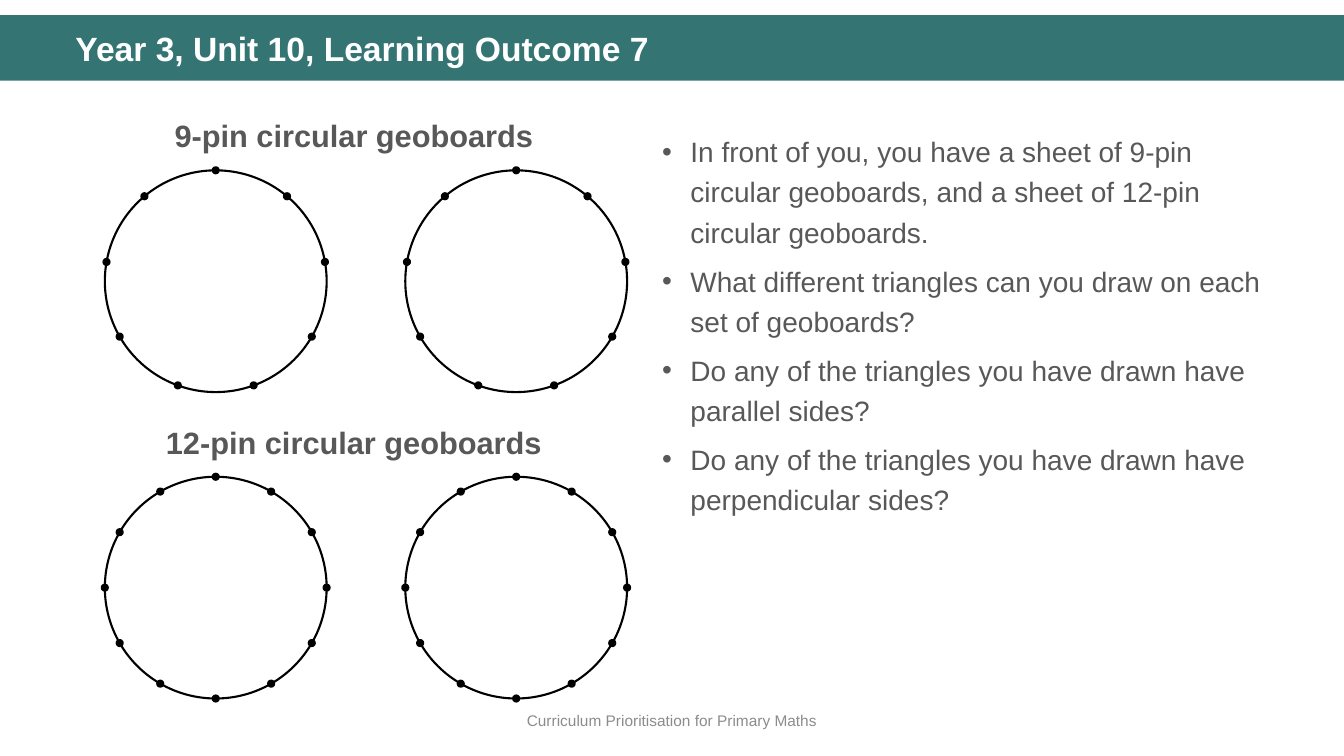
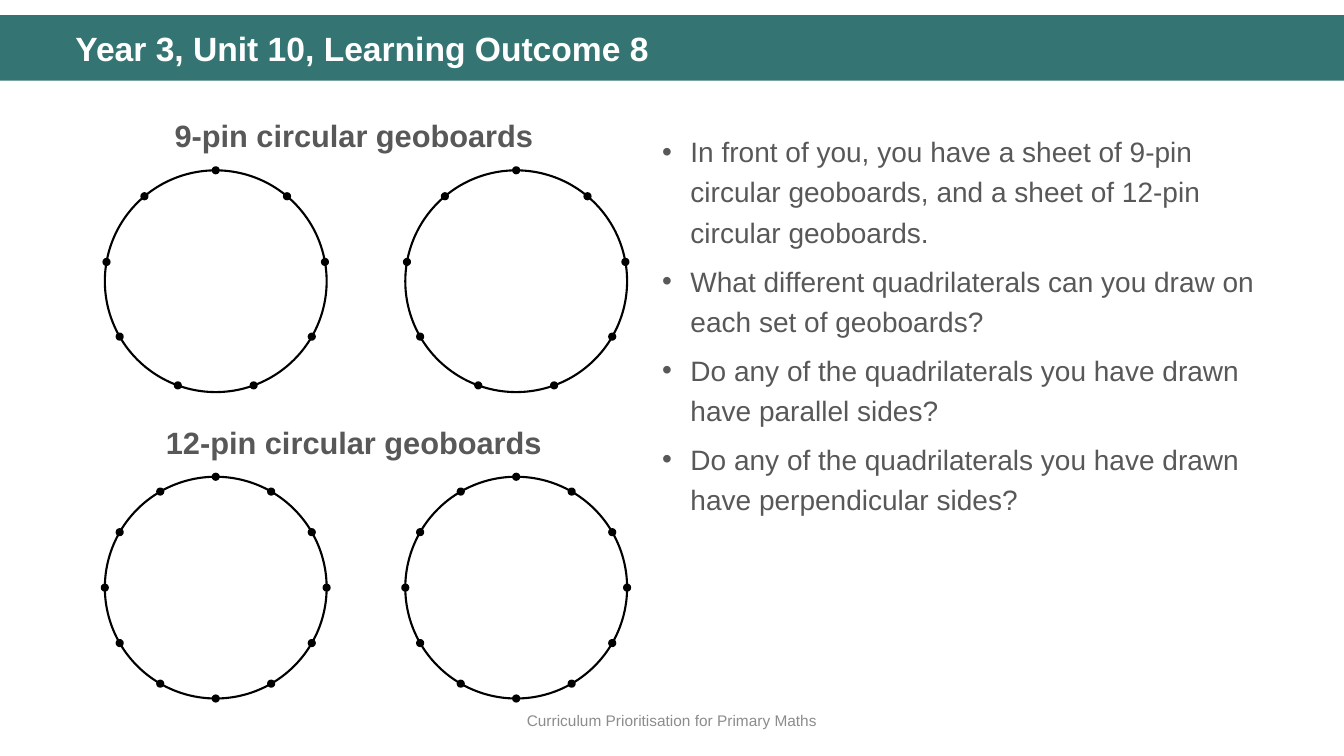
from math import cos, radians, sin

from lxml.etree import SubElement
from pptx import Presentation
from pptx.dml.color import RGBColor
from pptx.enum.shapes import MSO_SHAPE as Shape
from pptx.enum.text import MSO_ANCHOR as Anchor, PP_ALIGN as Align
from pptx.oxml.ns import qn
from pptx.util import Inches, Pt

WIDTH, HEIGHT = 13.33, 7.5
FONT = "Arial"
TEAL, WHITE, BLACK, TEXT, MUTED = "347574", "FFFFFF", "000000", "585858", "8C8C8C"

MARGIN = 0.65
BOARD_COL = (MARGIN, 5.72)  # left, width
QUESTION_COL = (6.47, 6.34)
FIRST_BOARD_X, BOARD_PITCH = 2.14, 2.98  # centres of the two boards in a row
BOARD_ROWS = [(9, 1.04), (12, 4.08)]  # pins, top of the heading
BOARD_DROP = 1.75  # from the heading's top to the boards' centre
RADIUS, PIN = 1.1, 0.06
INDENT = 0.28

FOOTER = "Curriculum Prioritisation for Primary Maths"
SLIDES = [
    ("Year 3, Unit 10, Learning Outcome 7", "triangles"),
    ("Year 3, Unit 10, Learning Outcome 8", "quadrilaterals"),
]


def rgb(value):
    return RGBColor.from_string(value)


def add_shape(shapes, kind, x, y, w, h, fill=None, line=None):
    sp = shapes.add_shape(kind, Inches(x), Inches(y), Inches(w), Inches(h))
    sp.shadow.inherit = False
    if fill:
        sp.fill.solid()
        sp.fill.fore_color.rgb = rgb(fill)
    else:
        sp.fill.background()
    if line:
        sp.line.color.rgb = rgb(line)
        sp.line.width = Pt(1.5)
    else:
        sp.line.fill.background()
    return sp


def add_bullet(p, color):
    pPr = p._p.get_or_add_pPr()
    pPr.set("marL", str(Inches(INDENT)))
    pPr.set("indent", str(-Inches(INDENT)))
    SubElement(SubElement(pPr, qn("a:buClr")), qn("a:srgbClr"), val=color)
    SubElement(pPr, qn("a:buFont"), typeface=FONT)
    SubElement(pPr, qn("a:buChar"), char="•")


def add_text(s, lines, x, y, w, h, size=20, color=TEXT, bold=False, align=Align.LEFT,
             anchor=Anchor.TOP, spacing=1.0, before=0, bullets=False):
    tf = s.shapes.add_textbox(Inches(x), Inches(y), Inches(w), Inches(h)).text_frame
    tf.word_wrap = True
    tf.vertical_anchor = anchor
    for i, line in enumerate(lines):
        p = tf.add_paragraph() if i else tf.paragraphs[0]
        if bullets:
            add_bullet(p, color)
        p.alignment = align
        p.line_spacing = spacing
        if i:
            p.space_before = Pt(before)
        r = p.add_run()
        r.text = line
        r.font.name, r.font.size, r.font.bold = FONT, Pt(size), bold
        r.font.color.rgb = rgb(color)


def add_circle(shapes, x, y, radius, fill=None):
    """Draw a black-edged circle centred on x, y."""
    add_shape(shapes, Shape.OVAL, x - radius, y - radius, 2 * radius, 2 * radius,
              fill=fill, line=BLACK)


def add_geoboard(s, x, y, pins):
    """Group a circle with pins spaced evenly from its top."""
    shapes = s.shapes.add_group_shape().shapes
    add_circle(shapes, x, y, RADIUS)
    for i in range(pins):
        angle = radians(360 * i / pins)
        add_circle(shapes, x + RADIUS * sin(angle), y - RADIUS * cos(angle), PIN / 2, BLACK)


def add_board_row(s, pins, top):
    left, width = BOARD_COL
    for col in range(2):
        add_geoboard(s, FIRST_BOARD_X + col * BOARD_PITCH, top + BOARD_DROP, pins)
    add_text(s, [f"{pins}-pin circular geoboards"], left, top, width, 0.76,
             size=22, bold=True, align=Align.CENTER, spacing=1.2)


def add_questions(s, polygons):
    left, width = QUESTION_COL
    lines = [
        "In front of you, you have a sheet of 9-pin circular geoboards, "
        "and a sheet of 12-pin circular geoboards.",
        f"What different {polygons} can you draw on each set of geoboards?",
    ]
    lines += [f"Do any of the {polygons} you have drawn have {relation} sides?"
              for relation in ("parallel", "perpendicular")]
    add_text(s, lines, left, 1.22, width, 5.77, spacing=1.2, before=6, bullets=True)


def add_frame(s, title):
    """Add the title band, title and footer."""
    add_shape(s.shapes, Shape.RECTANGLE, 0, 0.15, WIDTH, 0.65, fill=TEAL)
    add_text(s, [FOOTER], 0, 6.95, WIDTH, 0.4, size=11, color=MUTED,
             align=Align.CENTER, anchor=Anchor.MIDDLE)
    add_text(s, [title], MARGIN, 0.27, 12.32, 0.47, size=24, color=WHITE,
             bold=True, spacing=0.9)


def main():
    prs = Presentation()
    prs.slide_width, prs.slide_height = Inches(WIDTH), Inches(HEIGHT)
    for title, polygons in SLIDES:
        s = prs.slides.add_slide(prs.slide_layouts[6])
        add_frame(s, title)
        for pins, top in BOARD_ROWS:
            add_board_row(s, pins, top)
        add_questions(s, polygons)
    prs.save("out.pptx")


if __name__ == "__main__":
    main()
